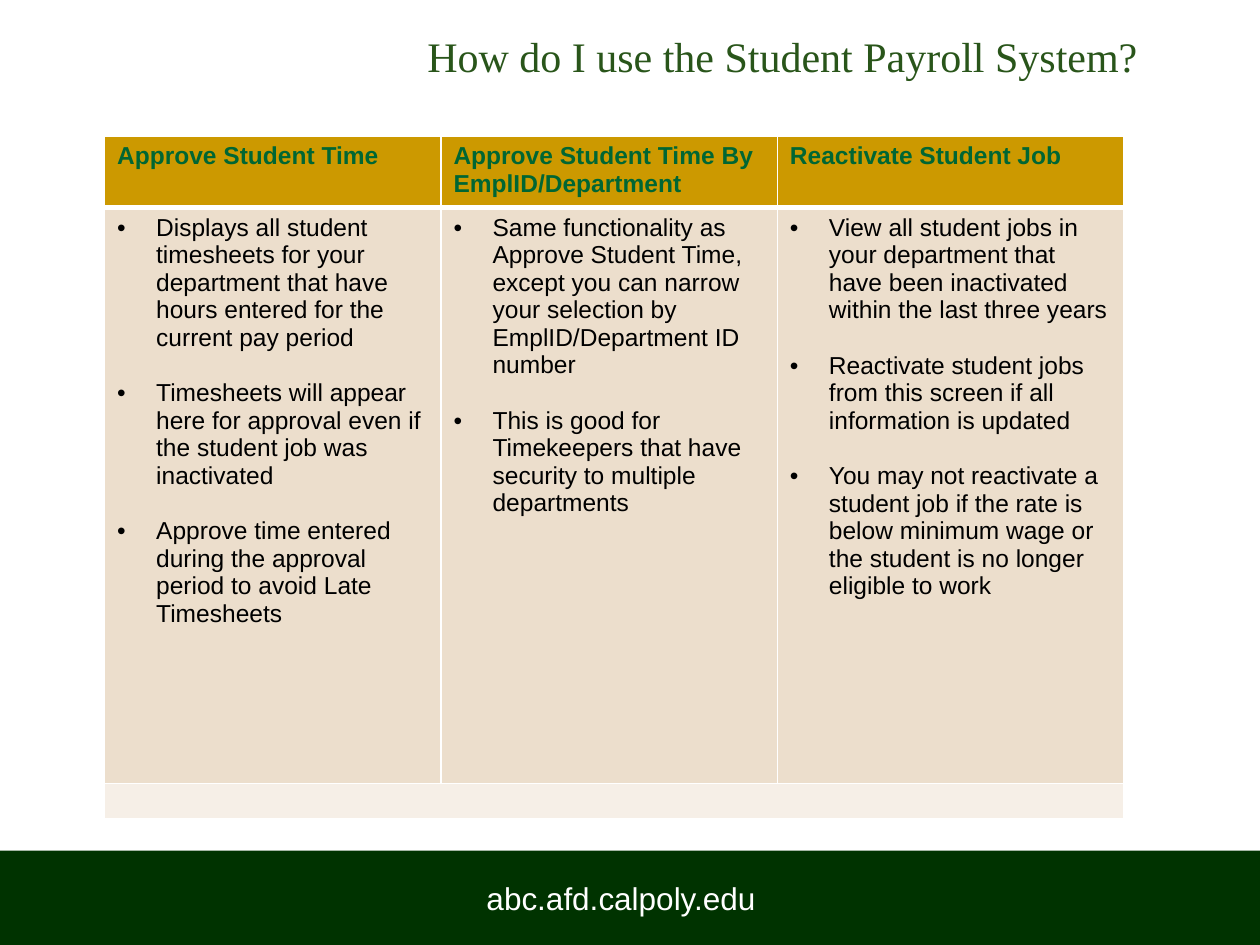
from dataclasses import dataclass

from lxml.etree import SubElement
from pptx import Presentation
from pptx.dml.color import RGBColor
from pptx.enum.shapes import MSO_SHAPE
from pptx.enum.text import MSO_ANCHOR, PP_ALIGN
from pptx.oxml.ns import qn
from pptx.util import Inches, Pt


@dataclass(frozen=True)
class Theme:
    white: str = "FFFFFF"
    black: str = "000000"
    footer: str = "003300"
    title: str = "29551A"
    heading: str = "006633"
    gold: str = "CC9900"
    sand: str = "ECDECC"
    pale: str = "F6EFE7"
    sans: str = "Arial"
    serif: str = "Times New Roman"
    title_size: int = 24
    footer_size: int = 18
    table_size: int = 14
    strip_size: int = 10


THEME = Theme()
COLUMN_WIDTHS = (2.67, 2.67, 2.75)
ROW_HEIGHTS = (0.53, 4.57, 0.28)
COLUMNS = {
    "Approve Student Time": (
        "Displays all student timesheets for your department that have hours "
        "entered for the current pay period",
        "Timesheets will appear here for approval even if the student job was inactivated",
        "Approve time entered during the approval period to avoid Late Timesheets",
    ),
    "Approve Student Time By EmplID/Department": (
        "Same functionality as Approve Student Time, except you can narrow your "
        "selection by EmplID/Department ID number",
        "This is good for Timekeepers that have security to multiple departments",
    ),
    "Reactivate Student Job": (
        "View all student jobs in your department that have been inactivated "
        "within the last three years",
        "Reactivate student jobs from this screen if all information is updated",
        "You may not reactivate a student job if the rate is below minimum wage "
        "or the student is no longer eligible to work",
    ),
}


def style_text(para, size, color, name=THEME.sans, bold=False):
    for span in para.runs:
        span.font.name = name
        span.font.size = Pt(size)
        span.font.bold = bold
        span.font.color.rgb = RGBColor.from_string(color)


def fill_solid(item, color):
    item.fill.solid()
    item.fill.fore_color.rgb = RGBColor.from_string(color)


def add_bullet(para):
    props = para._p.get_or_add_pPr()
    props.set("marL", str(Inches(0.31)))
    props.set("indent", str(-Inches(0.31)))
    SubElement(props, qn("a:buFont"), typeface=THEME.sans)
    SubElement(props, qn("a:buChar"), char="•")


def format_cell(cell, color, top=1, bottom=1):
    """Fill the cell and draw its white borders, widths in points."""
    props = cell._tc.get_or_add_tcPr()
    for side, width in (("L", 1), ("R", 1), ("T", top), ("B", bottom)):
        line = SubElement(props, qn(f"a:ln{side}"), w=str(Pt(width)))
        paint = SubElement(line, qn("a:solidFill"))
        SubElement(paint, qn("a:srgbClr"), val=THEME.white)
    fill_solid(cell, color)


def add_title(page, left, top, width, height):
    frame = page.shapes.add_textbox(left, top, width, height).text_frame
    frame.word_wrap = True
    frame.vertical_anchor = MSO_ANCHOR.MIDDLE
    frame.text = "How do I use the Student Payroll System?"
    para = frame.paragraphs[0]
    para.alignment = PP_ALIGN.CENTER
    style_text(para, THEME.title_size, THEME.title, THEME.serif)


def add_footer(page, left, top, width, height):
    band = page.shapes.add_shape(MSO_SHAPE.RECTANGLE, left, top, width, height)
    band.shadow.inherit = False
    fill_solid(band, THEME.footer)
    band.line.fill.background()
    frame = band.text_frame
    frame.margin_right = Inches(0.24)
    frame.vertical_anchor = MSO_ANCHOR.MIDDLE
    frame.text = "abc.afd.calpoly.edu"
    para = frame.paragraphs[0]
    para.alignment = PP_ALIGN.CENTER
    style_text(para, THEME.footer_size, THEME.white)


def fill_heading(cell, text):
    cell.text = text
    style_text(cell.text_frame.paragraphs[0], THEME.table_size, THEME.heading, bold=True)
    format_cell(cell, THEME.gold, bottom=3)


def fill_points(cell, points):
    frame = cell.text_frame
    for index, point in enumerate(points):
        para = frame.add_paragraph() if index else frame.paragraphs[0]
        para.text = point
        if index:
            para.space_before = Pt(16)
        add_bullet(para)
        style_text(para, THEME.table_size, THEME.black)
    format_cell(cell, THEME.sand, top=3)


def fill_strip(cell):
    """Keep an empty cell low enough for the closing row."""
    para = cell.text_frame.paragraphs[0]
    SubElement(para._p, qn("a:endParaRPr"), sz=str(THEME.strip_size * 100))
    format_cell(cell, THEME.pale)


def add_screens_table(page, left, top, width, height):
    table = page.shapes.add_table(
        len(ROW_HEIGHTS), len(COLUMNS), left, top, width, height
    ).table
    table.first_row = table.horz_banding = False
    for column, share in zip(table.columns, COLUMN_WIDTHS):
        column.width = int(width * share / sum(COLUMN_WIDTHS))
    for row, share in zip(table.rows, ROW_HEIGHTS):
        row.height = int(height * share / sum(ROW_HEIGHTS))
    for index, (heading, points) in enumerate(COLUMNS.items()):
        fill_heading(table.cell(0, index), heading)
        fill_points(table.cell(1, index), points)
        fill_strip(table.cell(2, index))
    table.cell(2, 0).merge(table.cell(2, len(COLUMNS) - 1))


def main():
    deck = Presentation()
    deck.slide_width = Inches(10)
    deck.slide_height = Inches(7.5)
    page = deck.slides.add_slide(deck.slide_layouts[6])
    add_footer(page, Inches(0), Inches(6.75), deck.slide_width, Inches(0.75))
    add_title(page, Inches(3), Inches(0.17), Inches(6.42), Inches(0.55))
    add_screens_table(
        page, Inches(0.83), Inches(1.08), Inches(sum(COLUMN_WIDTHS)), Inches(sum(ROW_HEIGHTS))
    )
    deck.save("out.pptx")


if __name__ == "__main__":
    main()
